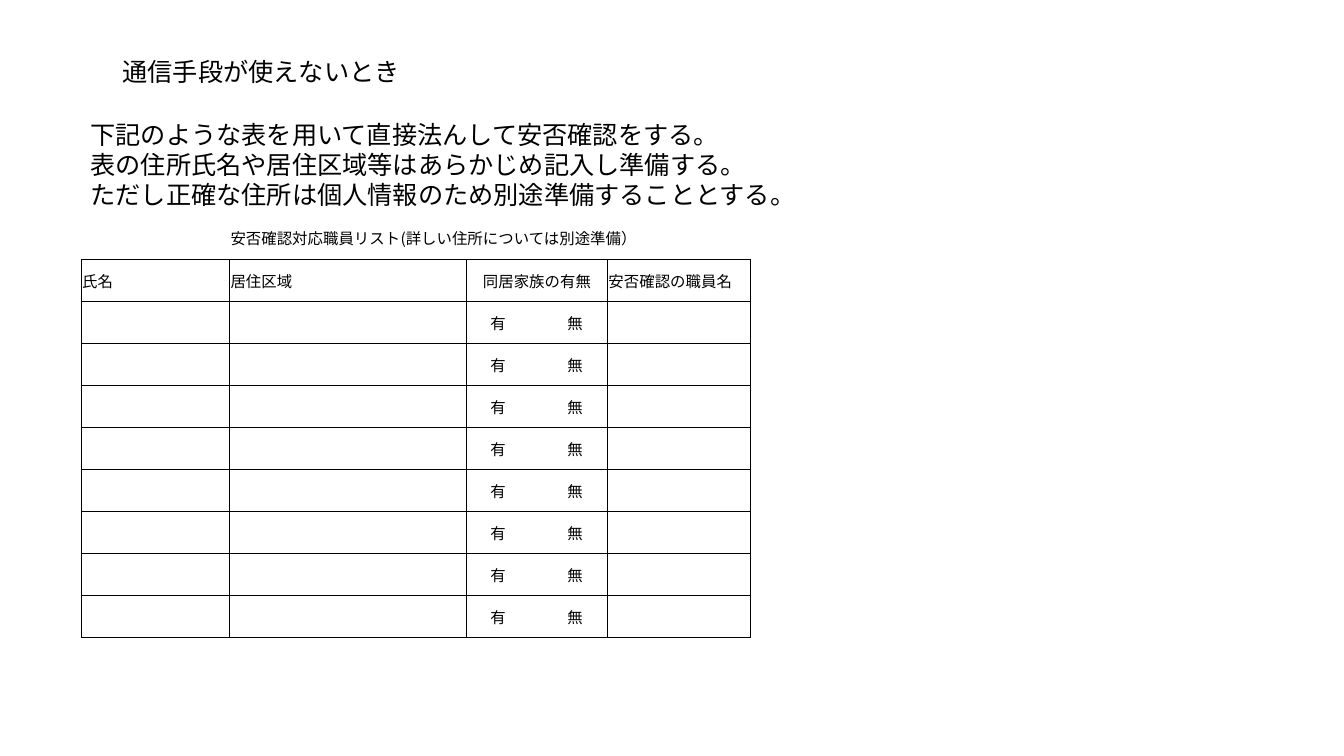
import dataclasses

import pptx
import pptx.dml.color
import pptx.enum.lang
import pptx.enum.text
import pptx.oxml.ns
import pptx.util
from lxml import etree

Pt = pptx.util.Pt
qn = pptx.oxml.ns.qn


@dataclasses.dataclass(frozen=True)
class Theme:
    font: str = "Noto Sans CJK JP"
    ink: str = "000000"
    body_size: float = 18
    table_size: float = 11
    border: float = 0.5
    plain_table: str = "{2D5ABB26-0587-4C30-8999-92F81FD0307C}"


THEME = Theme()
HEADERS = ["氏名", "居住区域", "同居家族の有無", "安否確認の職員名"]
COLUMN_WIDTHS = [106, 169.3, 100.7, 102]
CAPTION_HEIGHT = 32
ROW_HEIGHT = 30
STAFF_ROWS = 8
FAMILY_COLUMN = 2
FAMILY_INDENT = 17
FAMILY_TAB = 55
INSTRUCTIONS = [
    "下記のような表を用いて直接法んして安否確認をする。",
    "表の住所氏名や居住区域等はあらかじめ記入し準備する。",
    "ただし正確な住所は個人情報のため別途準備することとする。",
]


def add_span(para, text, size):
    span = para.add_run()
    span.text = text
    span.font.size = Pt(size)
    span.font.name = THEME.font
    span.font.language_id = pptx.enum.lang.MSO_LANGUAGE_ID.JAPANESE
    span.font.color.rgb = pptx.dml.color.RGBColor.from_string(THEME.ink)
    latin = span.font._element.find(qn("a:latin"))
    east_asian = etree.Element(qn("a:ea"), typeface=THEME.font)
    latin.addnext(east_asian)


def add_text(page, left, top, width, height, lines):
    box = page.shapes.add_textbox(Pt(left), Pt(top), Pt(width), Pt(height))
    frame = box.text_frame
    frame.word_wrap = True
    frame.auto_size = pptx.enum.text.MSO_AUTO_SIZE.SHAPE_TO_FIT_TEXT
    for index, line in enumerate(lines):
        para = frame.add_paragraph() if index else frame.paragraphs[0]
        add_span(para, line, THEME.body_size)


def style_cell(cell, edges):
    cell.margin_left = cell.margin_right = cell.margin_top = Pt(0.7)
    cell.margin_bottom = 0
    cell.vertical_anchor = pptx.enum.text.MSO_ANCHOR.MIDDLE
    cell.fill.background()
    properties = cell._tc.get_or_add_tcPr()
    for index, edge in enumerate(edges):
        line = etree.Element(qn(f"a:ln{edge}"), w=str(Pt(THEME.border)))
        fill = etree.SubElement(line, qn("a:solidFill"))
        etree.SubElement(fill, qn("a:srgbClr"), val=THEME.ink)
        properties.insert(index, line)


def add_family_choice(cell):
    cell.margin_left = Pt(FAMILY_INDENT)
    para = cell.text_frame.paragraphs[0]
    tabs = etree.SubElement(para._p.get_or_add_pPr(), qn("a:tabLst"))
    etree.SubElement(tabs, qn("a:tab"), pos=str(Pt(FAMILY_TAB)), algn="l")
    add_span(para, "有\t無", THEME.table_size)


def add_staff_table(page, left, top):
    row_heights = [CAPTION_HEIGHT] + [ROW_HEIGHT] * (STAFF_ROWS + 1)
    frame = page.shapes.add_table(
        len(row_heights), len(HEADERS),
        Pt(left), Pt(top), Pt(sum(COLUMN_WIDTHS)), Pt(sum(row_heights)),
    )
    table = frame.table
    table.first_row = table.horz_banding = False
    table._tbl.tblPr.find(qn("a:tableStyleId")).text = THEME.plain_table
    for column, width in zip(table.columns, COLUMN_WIDTHS):
        column.width = Pt(width)
    for index, (row, height) in enumerate(zip(table.rows, row_heights)):
        row.height = Pt(height)
        for cell in row.cells:
            style_cell(cell, "LRTB" if index else "B")

    caption = table.cell(0, 1)
    caption.merge(table.cell(0, len(HEADERS) - 1))
    add_span(caption.text_frame.paragraphs[0],
             "安否確認対応職員リスト(詳しい住所については別途準備）", THEME.table_size)
    for column, header in enumerate(HEADERS):
        para = table.cell(1, column).text_frame.paragraphs[0]
        if column == FAMILY_COLUMN:
            para.alignment = pptx.enum.text.PP_ALIGN.CENTER
        add_span(para, header, THEME.table_size)
    for row in range(2, len(row_heights)):
        add_family_choice(table.cell(row, FAMILY_COLUMN))


def main():
    deck = pptx.Presentation()
    deck.slide_width, deck.slide_height = Pt(960), Pt(540)
    page = deck.slides.add_slide(deck.slide_layouts[6])
    add_text(page, 80.4, 36.7, 216.7, 29, ["通信手段が使えないとき"])
    add_staff_table(page, 58, 153.4)
    add_text(page, 57.6, 81.4, 561.6, 72.7, INSTRUCTIONS)
    deck.save("out.pptx")


if __name__ == "__main__":
    main()
